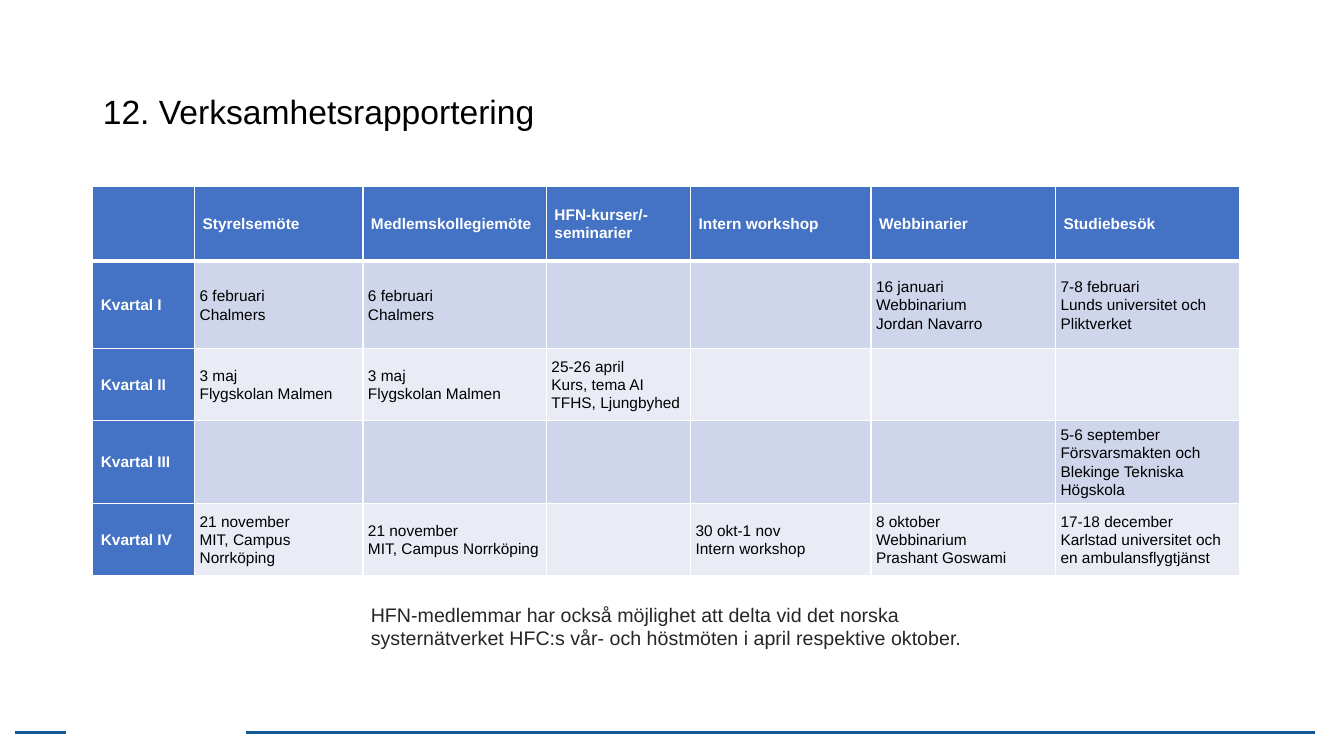
"""Build the slide with the yearly activity report as a table by quarter."""
from lxml.etree import SubElement
from pptx import Presentation
from pptx.dml.color import RGBColor
from pptx.enum.shapes import MSO_CONNECTOR
from pptx.enum.text import MSO_ANCHOR, MSO_AUTO_SIZE, PP_ALIGN
from pptx.oxml.ns import qn
from pptx.util import Pt

TITLE = "12. Verksamhetsrapportering"
NOTE = ("HFN-medlemmar har också möjlighet att delta vid det norska "
        "systernätverket HFC:s vår- och höstmöten i april respektive oktober.")
HEADINGS = ["", "Styrelsemöte", "Medlemskollegiemöte", "HFN-kurser/-seminarier",
            "Intern workshop", "Webbinarier", "Studiebesök"]
FEBRUARY = ["6 februari", "Chalmers"]
MAY = ["3 maj", "Flygskolan Malmen"]
NOVEMBER = ["21 november", "MIT, Campus Norrköping"]
QUARTERS = [
    ("Kvartal I", FEBRUARY, FEBRUARY, [], [],
     ["16 januari", "Webbinarium", "Jordan Navarro"],
     ["7-8 februari", "Lunds universitet och Pliktverket"]),
    ("Kvartal II", MAY, MAY, ["25-26 april", "Kurs, tema AI", "TFHS, Ljungbyhed"],
     [], [], []),
    ("Kvartal III", [], [], [], [], [],
     ["5-6 september", "Försvarsmakten och Blekinge Tekniska Högskola"]),
    ("Kvartal IV", NOVEMBER, NOVEMBER, [], ["30 okt-1 nov", "Intern workshop"],
     ["8 oktober", "Webbinarium", "Prashant Goswami"],
     ["17-18 december", "Karlstad universitet och en ambulansflygtjänst"]),
]
COLUMN_WIDTHS = [101, 167, 182, 143, 179, 183, 183]
ROW_HEIGHTS = [74, 87, 71, 71, 71]
FOOTER_LINES = [(244, 1304), (15, 65)]
FOOTER_TOP = 727
COLORS = {"rule": "105895", "header": "4472C4", "odd": "CFD5EA", "even": "E9EBF5",
          "white": "FFFFFF", "black": "000000", "note": "272626"}
FONT = "Arial"
PX = 9144


def px(*lengths):
    return [length * PX for length in lengths]


def color(name):
    return RGBColor.from_string(COLORS[name])


def add_run(para, text, size, ink, bold=False):
    span = para.add_run()
    span.text = text
    span.font.name = FONT
    span.font.size = Pt(size)
    span.font.bold = bold
    span.font.color.rgb = color(ink)


def add_border(cell, side, width):
    line = SubElement(cell._tc.get_or_add_tcPr(), qn(f"a:ln{side}"), w=str(Pt(width)))
    fill = SubElement(line, qn("a:solidFill"))
    SubElement(fill, qn("a:srgbClr"), val=COLORS["white"])


def fill_cell(cell, row, column, lines):
    heading = row == 0 or column == 0
    thick = {(0, "B"), (1, "T")}
    for side in "LRTB":
        add_border(cell, side, 3 if (row, side) in thick else 1)
    cell.fill.solid()
    cell.fill.fore_color.rgb = color("header" if heading else "odd" if row % 2 else "even")
    cell.vertical_anchor = MSO_ANCHOR.MIDDLE
    inset = (8 if heading else 5) * PX
    cell.margin_left = cell.margin_right = inset
    cell.margin_top = cell.margin_bottom = inset
    for index, text in enumerate(lines):
        frame = cell.text_frame
        para = frame.add_paragraph() if index else frame.paragraphs[0]
        para.line_spacing = 1.07
        para.space_after = Pt(0 if row else 8)
        add_run(para, text, 11, "white" if heading else "black", heading)


def add_title(page):
    title = page.shapes.title
    title.left, title.top, title.width, title.height = px(92, 40, 1150, 145)
    frame = title.text_frame
    frame.auto_size = MSO_AUTO_SIZE.NONE
    frame.vertical_anchor = MSO_ANCHOR.MIDDLE
    para = frame.paragraphs[0]
    para.alignment = PP_ALIGN.LEFT
    para.line_spacing = 0.9
    add_run(para, TITLE, 24, "black")


def add_calendar(page):
    area = px(92, 185, sum(COLUMN_WIDTHS), sum(ROW_HEIGHTS))
    table = page.shapes.add_table(len(ROW_HEIGHTS), len(COLUMN_WIDTHS), *area).table
    for column, width in zip(table.columns, COLUMN_WIDTHS):
        column.width = width * PX
    for row, height in zip(table.rows, ROW_HEIGHTS):
        row.height = height * PX
    rows = [[[text] if text else [] for text in HEADINGS]]
    rows += [[[quarter], *events] for quarter, *events in QUARTERS]
    for r, cells in enumerate(rows):
        for c, lines in enumerate(cells):
            fill_cell(table.cell(r, c), r, c, lines)


def add_note(page):
    box = page.shapes.add_textbox(*px(358, 593, 664, 57))
    box.text_frame.word_wrap = True
    box.text_frame.auto_size = MSO_AUTO_SIZE.SHAPE_TO_FIT_TEXT
    add_run(box.text_frame.paragraphs[0], NOTE, 14, "note")


def add_footer_lines(page):
    for start, end in FOOTER_LINES:
        rule = page.shapes.add_connector(
            MSO_CONNECTOR.STRAIGHT, *px(start, FOOTER_TOP, end, FOOTER_TOP))
        rule.line.color.rgb = color("rule")
        rule.line.width = Pt(2.25)
        SubElement(rule._element.spPr, qn("a:effectLst"))


def main():
    deck = Presentation()
    deck.slide_width, deck.slide_height = px(1333, 750)
    page = deck.slides.add_slide(deck.slide_layouts[5])
    add_footer_lines(page)
    add_title(page)
    add_calendar(page)
    add_note(page)
    deck.save("out.pptx")


if __name__ == "__main__":
    main()
